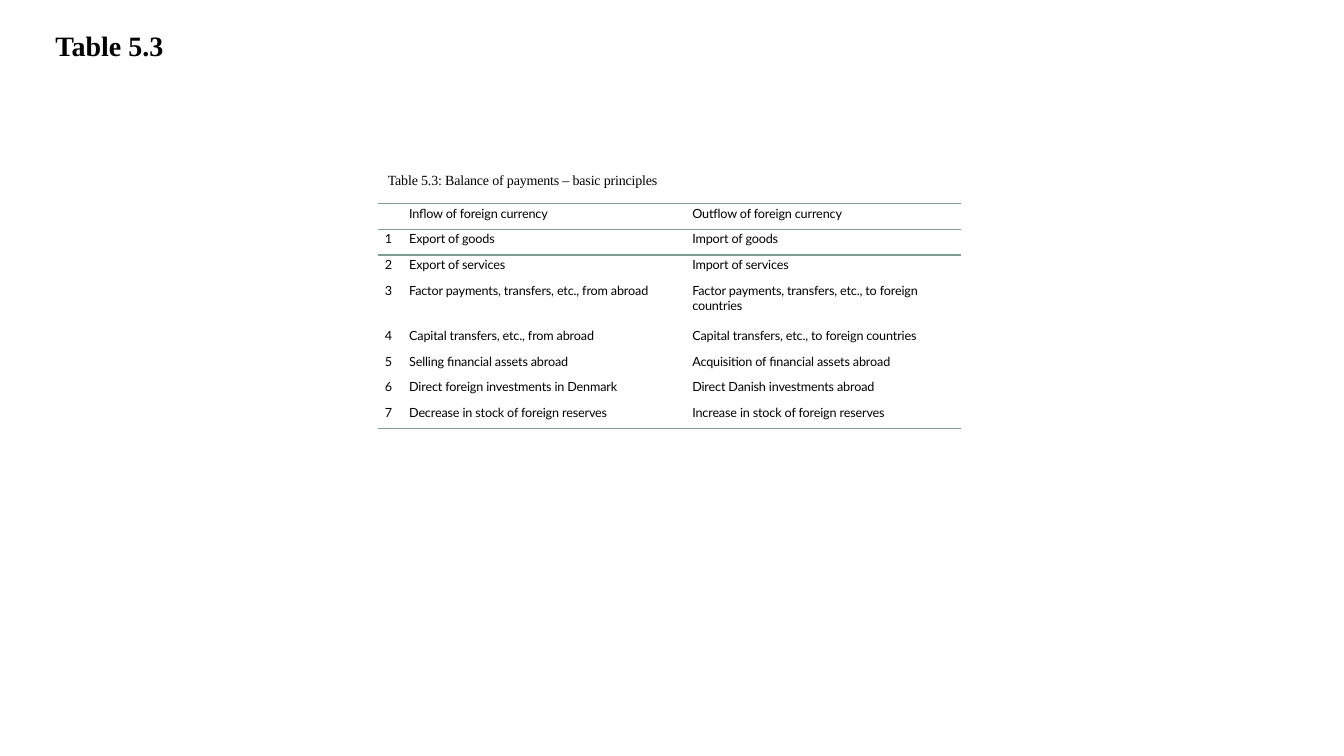
"""Build the slide "Table 5.3" on the basic principles of the balance of payments."""
from dataclasses import dataclass

from lxml.etree import SubElement
from pptx import Presentation
from pptx.dml.color import RGBColor
from pptx.enum.text import MSO_ANCHOR, MSO_AUTO_SIZE, PP_ALIGN
from pptx.oxml import parse_xml
from pptx.oxml.ns import qn
from pptx.util import Pt


@dataclass(frozen=True)
class Theme:
    """Fonts, sizes and colours of the slide."""
    serif: str = "Times New Roman"
    sans: str = "Lato"
    ink: str = "000000"
    rule: str = "7F9C90"
    title: int = 20
    caption: int = 10
    body: int = 9


SCALE = 4572
THEME = Theme()
NO_STYLE = "{2D5ABB26-0587-4C30-8999-92F81FD0307C}"
DRAWING = "http://schemas.openxmlformats.org/drawingml/2006/main"


def assign(item, values):
    """Set each named attribute of an item."""
    for name, value in values.items():
        setattr(item, name, value)


def write(line, text, face, size, bold=False, track=0):
    """Add a formatted run to a paragraph."""
    run = line.add_run()
    run.text = text
    assign(run.font, {"name": face, "size": Pt(size), "bold": bold})
    run.font.color.rgb = RGBColor.from_string(THEME.ink)
    if track:
        run.font._element.set("spc", str(track))


deck = Presentation()
assign(deck, {"slide_width": 2667 * SCALE, "slide_height": 1500 * SCALE})
slide = deck.slides.add_slide(deck.slide_layouts[5])

title = slide.shapes.title
assign(title, {"left": 90 * SCALE, "top": 54 * SCALE,
               "width": 396 * SCALE, "height": 194 * SCALE})
assign(title.text_frame, {"word_wrap": True, "auto_size": MSO_AUTO_SIZE.NONE,
                          "vertical_anchor": MSO_ANCHOR.TOP})
line = title.text_frame.paragraphs[0]
assign(line, {"alignment": PP_ALIGN.LEFT, "line_spacing": 0.9})
write(line, "Table 5.3", THEME.serif, THEME.title, bold=True)

caption = slide.shapes.add_textbox(*(n * SCALE for n in (750, 334, 1334, 52)))
assign(caption.text_frame, {"word_wrap": True,
                            "auto_size": MSO_AUTO_SIZE.SHAPE_TO_FIT_TEXT})
line = caption.text_frame.paragraphs[0]
assign(line, {"alignment": PP_ALIGN.JUSTIFY, "line_spacing": Pt(11),
              "space_after": Pt(6)})
write(line, "Table 5.3: Balance of payments – basic principles",
      THEME.serif, THEME.caption, track=-10)

FLOWS = [
    ("Inflow of foreign currency", "Outflow of foreign currency"),
    ("Export of goods", "Import of goods"),
    ("Export of services", "Import of services"),
    ("Factor payments, transfers, etc., from abroad",
     "Factor payments, transfers, etc., to foreign countries"),
    ("Capital transfers, etc., from abroad",
     "Capital transfers, etc., to foreign countries"),
    ("Selling financial assets abroad", "Acquisition of financial assets abroad"),
    ("Direct foreign investments in Denmark", "Direct Danish investments abroad"),
    ("Decrease in stock of foreign reserves",
     "Increase in stock of foreign reserves"),
]
WIDTHS = (62, 548, 548)
HEIGHTS = [90 if row == 3 else 51 for row in range(len(FLOWS))]
EDGES = {0: ("lnT", "lnB"), 1: ("lnT",), len(FLOWS) - 1: ("lnB",)}

frame = slide.shapes.add_table(
    len(FLOWS), len(WIDTHS),
    *(n * SCALE for n in (750, 404, sum(WIDTHS), sum(HEIGHTS))))
table = frame.table
assign(table, {"first_row": False, "horz_banding": False})
table._tbl.tblPr.find(qn("a:tableStyleId")).text = NO_STYLE
for column, width in zip(table.columns, WIDTHS):
    column.width = width * SCALE

for row, (flow, height) in enumerate(zip(FLOWS, HEIGHTS)):
    table.rows[row].height = height * SCALE
    for col, text in enumerate((str(row) if row else "", *flow)):
        cell = table.cell(row, col)
        assign(cell, {"margin_left": (0 if col == 1 else 14) * SCALE,
                      "margin_right": 14 * SCALE, "margin_top": 4 * SCALE,
                      "margin_bottom": 4 * SCALE,
                      "vertical_anchor": MSO_ANCHOR.TOP})
        cell.fill.background()
        line = cell.text_frame.paragraphs[0]
        if text:
            write(line, text, THEME.sans, THEME.body, track=-10)
        else:
            SubElement(line._p, qn("a:endParaRPr"), sz=str(THEME.body * 100))
        for spot, edge in enumerate(EDGES.get(row, ())):
            cell._tc.tcPr.insert(spot, parse_xml(
                f'<a:{edge} xmlns:a="{DRAWING}" w="{Pt(1)}"><a:solidFill>'
                f'<a:srgbClr val="{THEME.rule}"/></a:solidFill></a:{edge}>'))

deck.save("out.pptx")
